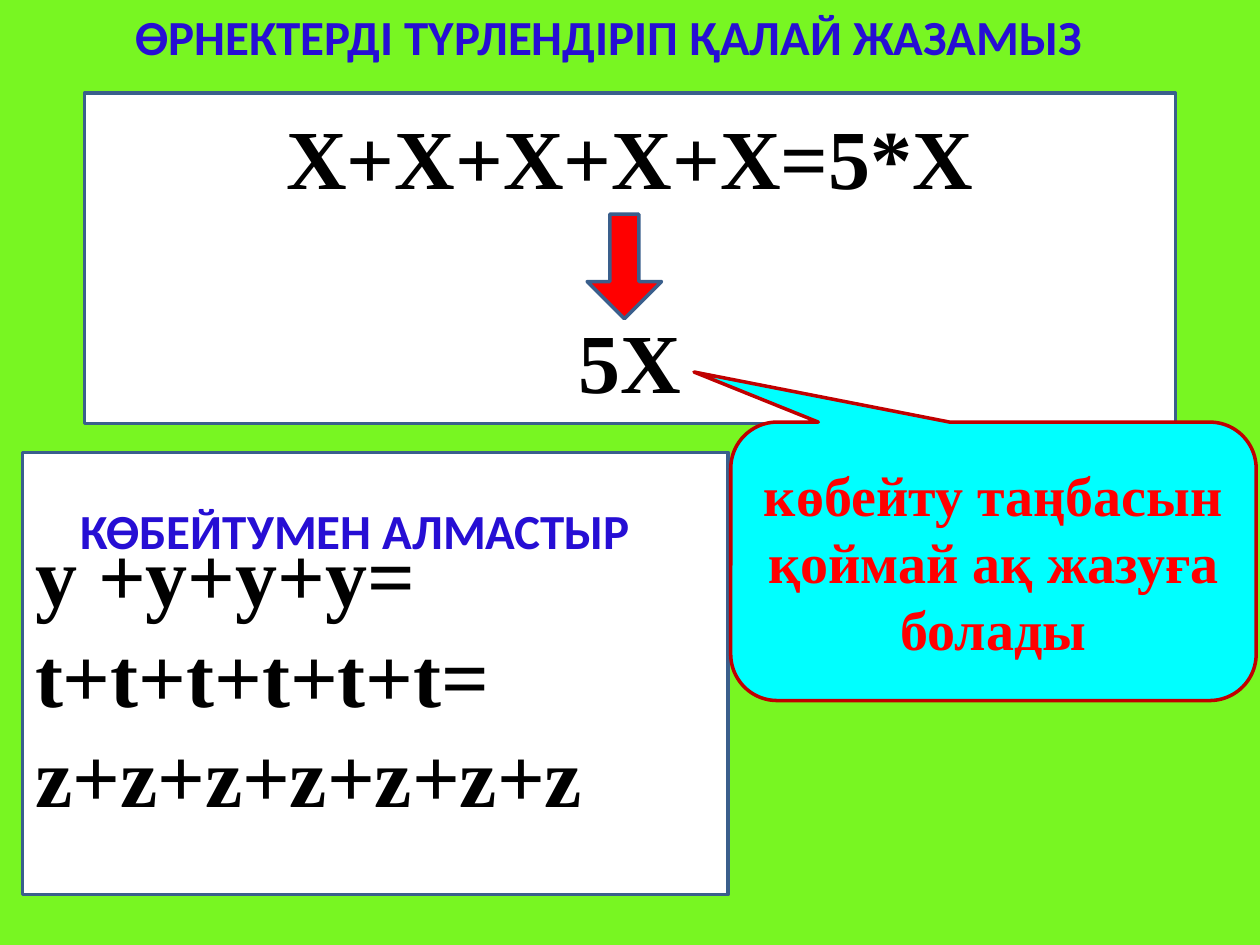
from dataclasses import dataclass

from pptx import Presentation
from pptx.dml.color import RGBColor
from pptx.enum.shapes import MSO_SHAPE
from pptx.enum.text import MSO_ANCHOR, MSO_AUTO_SIZE, PP_ALIGN
from pptx.util import Inches, Pt


@dataclass(frozen=True)
class Theme:
    background: str = "78F622"
    panel: str = "FFFFFF"
    border: str = "3A5F8C"
    formula: str = "000000"
    heading: str = "260ED4"
    arrow: str = "FF0000"
    callout: str = "00FFFF"
    callout_border: str = "C00000"
    callout_text: str = "FF0000"
    heading_font: str = "Calibri"
    body_font: str = "Times New Roman"
    heading_size: int = 28
    callout_size: int = 32
    formula_size: int = 48
    line_width: int = 2


class SlideBuilder:
    COLUMNS, ROWS = 100, 75

    def __init__(self, presentation, theme):
        self.theme = theme
        self.column = presentation.slide_width / self.COLUMNS
        self.row = presentation.slide_height / self.ROWS
        self.slide = presentation.slides.add_slide(presentation.slide_layouts[6])
        background = self.slide.background.fill
        background.solid()
        background.fore_color.rgb = RGBColor.from_string(theme.background)

    def place(self, left, top, width, height):
        return (round(left * self.column), round(top * self.row),
                round(width * self.column), round(height * self.row))

    def set_text(self, shape, lines, font_name, size, color, align, gap=0):
        frame = shape.text_frame
        frame.word_wrap = True
        frame.text = "\n".join(lines)
        for index, paragraph in enumerate(frame.paragraphs):
            paragraph.alignment = align
            paragraph.space_before = Pt(gap if index else 0)
            font = paragraph.font
            font.name, font.size, font.bold = font_name, Pt(size), True
            font.color.rgb = RGBColor.from_string(color)

    def shape(self, kind, box, fill, border):
        shape = self.slide.shapes.add_shape(kind, *self.place(*box))
        shape.shadow.inherit = False
        shape.fill.solid()
        shape.fill.fore_color.rgb = RGBColor.from_string(fill)
        shape.line.color.rgb = RGBColor.from_string(border)
        shape.line.width = Pt(self.theme.line_width)
        shape.text_frame.vertical_anchor = MSO_ANCHOR.MIDDLE
        return shape

    def panel(self, box, lines, align, gap=0):
        theme = self.theme
        panel = self.shape(MSO_SHAPE.RECTANGLE, box, theme.panel, theme.border)
        self.set_text(panel, lines, theme.body_font, theme.formula_size,
                      theme.formula, align, gap)

    def arrow(self, box):
        arrow = self.shape(MSO_SHAPE.DOWN_ARROW, box, self.theme.arrow, self.theme.border)
        arrow.adjustments[0] = 0.39
        arrow.adjustments[1] = 0.5

    def callout(self, box, text, pointer):
        theme = self.theme
        callout = self.shape(MSO_SHAPE.ROUNDED_RECTANGULAR_CALLOUT, box,
                             theme.callout, theme.callout_border)
        callout.adjustments[0], callout.adjustments[1] = pointer
        self.set_text(callout, [text], theme.body_font, theme.callout_size,
                      theme.callout_text, PP_ALIGN.CENTER)

    def heading(self, box, text):
        theme = self.theme
        heading = self.slide.shapes.add_textbox(*self.place(*box))
        self.set_text(heading, [text], theme.heading_font, theme.heading_size,
                      theme.heading, PP_ALIGN.CENTER)
        heading.text_frame.auto_size = MSO_AUTO_SIZE.SHAPE_TO_FIT_TEXT


def main():
    presentation = Presentation()
    presentation.slide_width = Inches(10)
    presentation.slide_height = Inches(7.5)
    builder = SlideBuilder(presentation, Theme())

    builder.panel((6.7, 7.4, 86.6, 26.2), ["Х+Х+Х+Х+Х=5*Х", "5Х"],
                  PP_ALIGN.CENTER, gap=59)
    builder.arrow((46.6, 17, 5.9, 8.3))
    builder.panel((1.8, 35.9, 56, 35.1),
                  ["у +у+у+у=", "t+t+t+t+t+t=", "z+z+z+z+z+z+z"], PP_ALIGN.LEFT)
    builder.callout((58, 33.5, 41.7, 22.1),
                    "көбейту таңбасын қоймай ақ жазуға болады", (-0.57, -0.68))
    builder.heading((0.4, 0, 95.8, 5.7), "ӨРНЕКТЕРДІ ТҮРЛЕНДІРІП ҚАЛАЙ ЖАЗАМЫЗ")
    builder.heading((1.7, 39.2, 52.9, 5.7), "КӨБЕЙТУМЕН АЛМАСТЫР")

    presentation.save("out.pptx")


if __name__ == "__main__":
    main()
